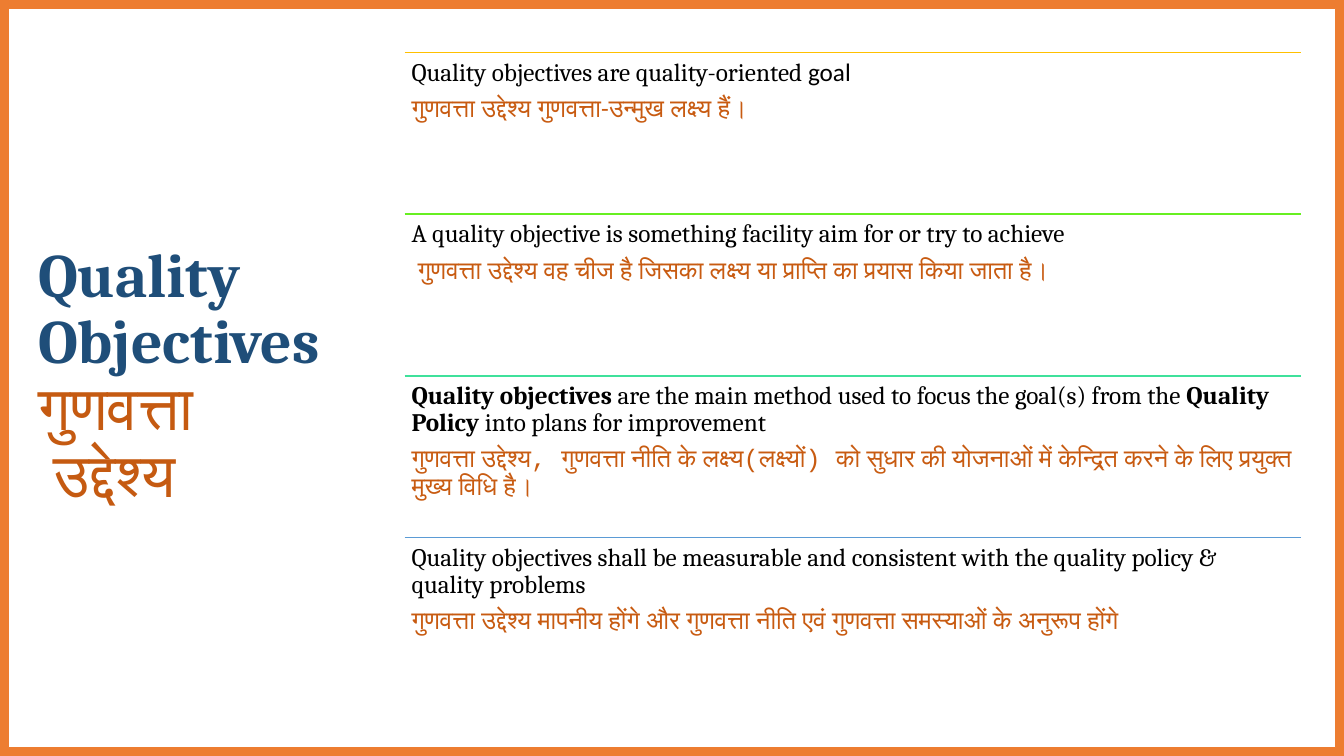
from lxml import etree
from pptx import Presentation
from pptx.dml.color import RGBColor
from pptx.enum.shapes import MSO_CONNECTOR, MSO_SHAPE
from pptx.enum.text import MSO_ANCHOR, MSO_AUTO_SIZE, PP_ALIGN
from pptx.oxml.ns import qn
from pptx.util import Pt

LINE = MSO_CONNECTOR.STRAIGHT
FRAME = MSO_SHAPE.FRAME
MIDDLE = MSO_ANCHOR.MIDDLE
FIXED = MSO_AUTO_SIZE.NONE
LEFT = PP_ALIGN.LEFT

SERIF, SANS, MONO = "Cambria", "Calibri", "Courier New"
ORANGE, NAVY, RUST, HINDI, BLACK = "ED7D31", "1F4E79", "C55A11", "C85B11", "000000"

# Each row: rule colour, English runs (text, font, bold), Hindi text, Hindi font
ROWS = [
    ("FFC000",
     [("Quality objectives are quality-oriented ", SERIF, False), ("goal", SANS, False)],
     "गुणवत्ता उद्देश्य गुणवत्ता-उन्मुख लक्ष्य हैं।", SANS),
    ("67EF21",
     [("A quality objective is something facility aim for or try to achieve", SERIF, False)],
     " गुणवत्ता उद्देश्य वह चीज है जिसका लक्ष्य या प्राप्ति का प्रयास किया जाता है।", SANS),
    ("3FE19B",
     [("Quality objectives", SERIF, True),
      (" are the main method used to focus the goal(s) from the ", SERIF, False),
      ("Quality Policy", SERIF, True),
      (" into plans for improvement", SERIF, False)],
     "गुणवत्ता उद्देश्य, गुणवत्ता नीति के लक्ष्य(लक्ष्यों) को सुधार की योजनाओं में "
     "केन्द्रित करने के लिए प्रयुक्त मुख्य विधि है।", MONO),
    ("5B9BD5",
     [("Quality objectives shall be measurable and consistent with the quality policy "
       "& quality problems", SERIF, False)],
     "गुणवत्ता उद्देश्य मापनीय होंगे और गुणवत्ता नीति एवं गुणवत्ता समस्याओं के अनुरूप होंगे", SANS),
]


def rgb(code):
    return RGBColor.from_string(code)


def add_run(para, text, face, bold):
    run = para.add_run()
    run.text = text
    run.font.name = face
    run.font.bold = bold
    return run


def style(para, size, color=None):
    para.line_spacing = 0.9
    para.font.size = Pt(size)
    if color:
        para.font.color.rgb = rgb(color)


def add_frame(slide, wide, high):
    """Border around the whole slide."""
    edge = slide.shapes.add_shape(FRAME, 0, 0, Pt(wide), Pt(high))
    edge.adjustments[0] = 6 / high
    edge.shadow.inherit = False
    edge.fill.solid()
    edge.fill.fore_color.rgb = rgb(ORANGE)
    edge.line.color.rgb = rgb(ORANGE)
    edge.line.width = Pt(1)


def add_title(slide, left, top, wide, high):
    """Bilingual heading at the left."""
    title = slide.shapes.title
    title.left, title.top, title.width, title.height = map(Pt, (left, top, wide, high))
    frame = title.text_frame
    frame.auto_size = FIXED
    frame.word_wrap = True
    frame.vertical_anchor = MIDDLE
    para = frame.paragraphs[0]
    para.alignment = LEFT
    style(para, 44)
    add_run(para, "Quality Objectives ", SERIF, True).font.color.rgb = rgb(NAVY)
    add_run(para, "गुणवत्ता", SANS, False).font.color.rgb = rgb(RUST)
    para.add_line_break()
    add_run(para, " उद्देश्य", SERIF, False).font.color.rgb = rgb(RUST)


def add_row(slide, left, top, wide, high, row):
    """Coloured rule with an English and a Hindi paragraph below it."""
    color, english, hindi, face = row
    rule = slide.shapes.add_connector(LINE, Pt(left), Pt(top), Pt(left + wide), Pt(top))
    rule.line.color.rgb = rgb(color)
    rule.line.width = Pt(1)
    etree.SubElement(rule.element.spPr, qn("a:effectLst"))

    box = slide.shapes.add_textbox(Pt(left), Pt(top), Pt(wide), Pt(high))
    frame = box.text_frame
    frame.word_wrap = True
    frame.margin_left = frame.margin_right = Pt(5)
    frame.margin_top = frame.margin_bottom = Pt(5)
    first, second = frame.paragraphs[0], frame.add_paragraph()
    for para, tone in ((first, BLACK), (second, HINDI)):
        style(para, 18, tone)
        para.space_after = Pt(6.3)
    for part in english:
        add_run(first, *part)
    add_run(second, hindi, face, False)


def add_rows(slide, left, top, wide, high):
    """Equal rows stacked in the given box."""
    step = high / len(ROWS)
    for i, row in enumerate(ROWS):
        add_row(slide, left, top + i * step, wide, step, row)


def main():
    deck = Presentation()
    deck.slide_width, deck.slide_height = Pt(960), Pt(540)
    slide = deck.slides.add_slide(deck.slide_layouts.get_by_name("Title Only"))
    add_frame(slide, 960, 540)
    add_title(slide, 20, 88.5, 232, 362)
    add_rows(slide, 289, 37.5, 640, 462)
    deck.save("out.pptx")


if __name__ == "__main__":
    main()
